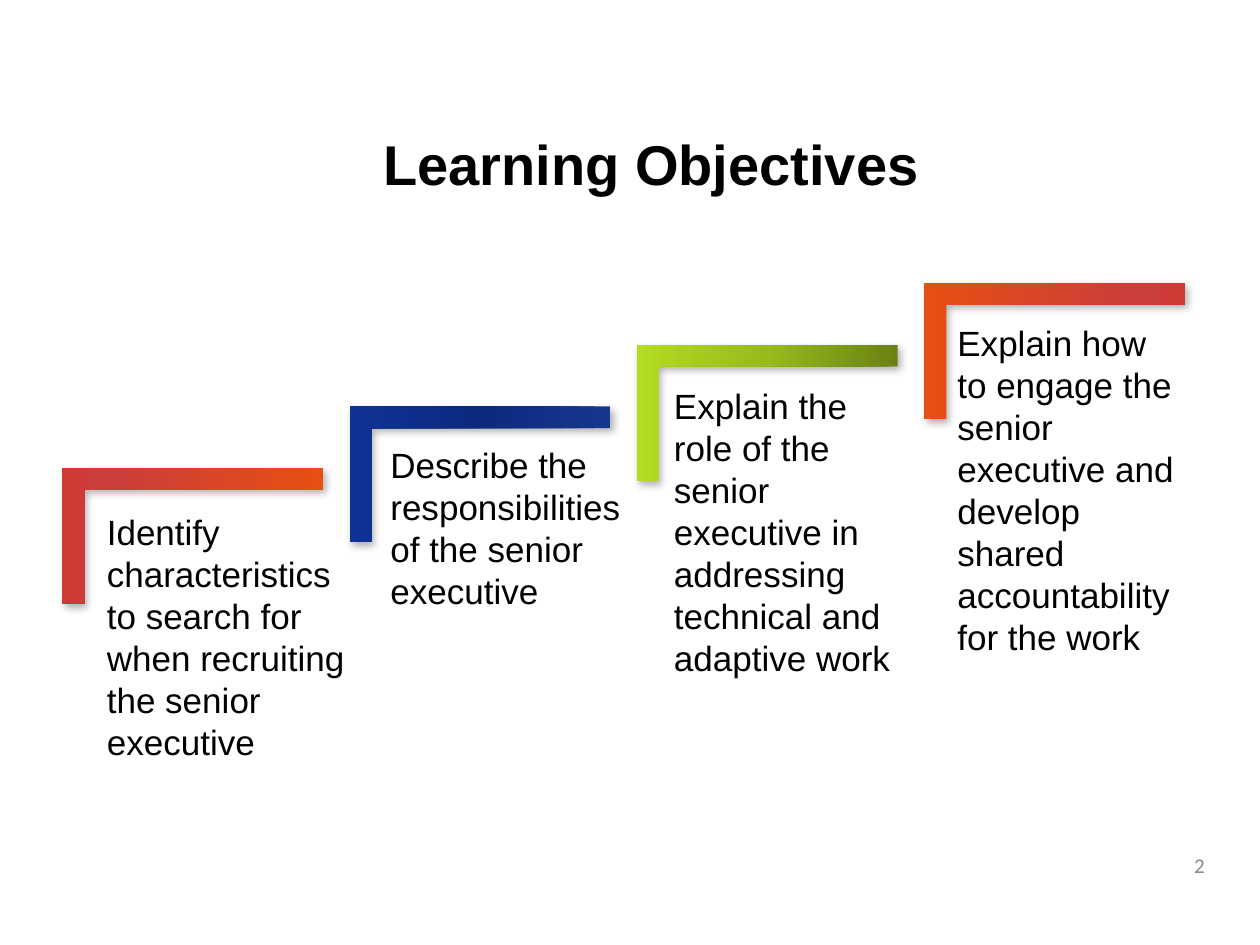
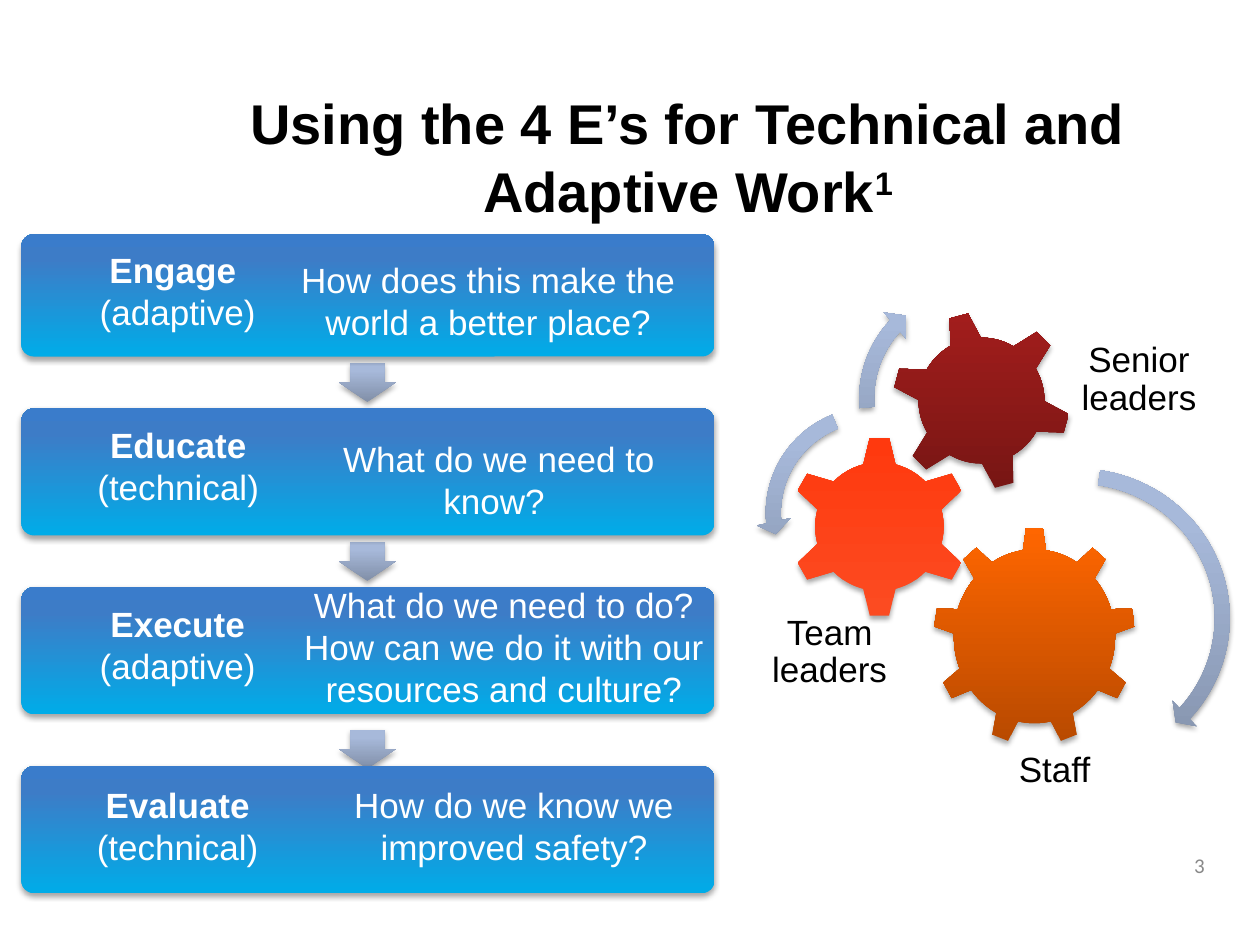
"""Build two slides: the learning objectives and the 4 E's with their gears."""
from dataclasses import dataclass
from math import cos, radians, sin

from pptx import Presentation
from pptx import util as u
from pptx.enum import shapes, text
from pptx.dml.color import RGBColor
from pptx.oxml import parse_xml
from pptx.oxml.ns import nsdecls

Box = tuple[float, float, float, float]
Stops = tuple[tuple[int, str], ...]
KIND = shapes.MSO_SHAPE
ALIGN = text.PP_ALIGN

HUES = {"black": "000000", "white": "FFFFFF", "grey": "898989"}
FADES: dict[str, Stops] = {
    "flame": ((0, "E65014"), (80, "CB3E3A"), (100, "CE3B37")),
    "navy": ((0, "17368D"), (50, "0C2A7E"), (100, "0E3296")),
    "lime": ((0, "6A8214"), (50, "97BA1D"), (100, "B3DC22")),
    "sky": ((0, "00ACE8"), (80, "3D7CC7"), (100, "3A7CCB")),
    "steel": ((0, "818FA8"), (80, "A7B9DA"), (100, "A7BADC")),
    "amber": ((0, "B94A00"), (100, "FF6600")),
    "coral": ((0, "FC4B21"), (100, "FF390E")),
    "wine": ((0, "781614"), (100, "A21D1C")),
}


@dataclass
class Shade:
    alpha: int
    blur: float
    dist: float
    angle: int


SLANT = Shade(30, 4.5, 2.6, 53)
DROP = Shade(35, 3.1, 1.8, 90)


@dataclass
class Note:
    box: Box
    words: str
    size: int = 20
    hue: str = "black"
    align: ALIGN = ALIGN.CENTER
    bold: bool = False
    font: str = "Arial"
    middle: bool = False
    pitch: float = 1.0


@dataclass
class Step:
    fade: str
    angle: int
    box: Box
    words: str


@dataclass
class Card:
    top: float
    high: float
    name: Box
    label: str
    ask: Box
    words: str


@dataclass
class Gear:
    mid: tuple[float, float]
    body: tuple[float, float]
    tip: tuple[float, float]
    teeth: int
    start: float
    root: float
    edge: float
    fade: str


@dataclass
class Turn:
    kind: KIND
    box: Box
    bends: tuple[float, ...]


STEPS = (
    Step("flame", 180, (0.75, 4, 2.17, 2.12),
         "Identify characteristics to search for when recruiting the senior executive"),
    Step("navy", 180, (3, 3.47, 2.17, 1.45),
         "Describe the responsibilities of the senior executive"),
    Step("lime", 180, (5.25, 3, 1.92, 2.46),
         "Explain the role of the senior executive in addressing technical and adaptive work"),
    Step("flame", 0, (7.5, 2.5, 2, 2.79),
         "Explain how to engage the senior executive and develop shared "
         "accountability for the work"),
)
CARDS = (
    Card(1.86, 0.97, (0.62, 1.92, 1.58, 0.77), "Engage \n(adaptive)",
         (2.25, 2, 3.25, 0.77), "How does this make the world a better place?"),
    Card(3.24, 1.01, (0.58, 3.31, 1.67, 0.77), "Educate\n(technical)",
         (2.5, 3.42, 2.92, 0.77), "What do we need to know? "),
    Card(4.66, 1.01, (0.62, 4.73, 1.58, 0.77), "Execute |(adaptive)",
         (2.25, 4.58, 3.5, 1.11),
         "What do we need to do? How can we do it with our resources and culture?"),
    Card(6.08, 1.01, (0.62, 6.17, 1.58, 0.77), "Evaluate| (technical)",
         (2.58, 6.17, 3, 0.77), "How do we know we improved safety?"),
)
DROPS = (2.81, 4.23, 5.72)
GEARS = (
    Gear((8.21, 5.05), (0.64, 0.69), (0.8, 0.86), 9, 90, 8.2, 4.8, "amber"),
    Gear((6.98, 4.18), (0.51, 0.51), (0.71, 0.71), 6, 30, 14.5, 6.2, "coral"),
    Gear((7.79, 3.18), (0.5, 0.5), (0.7, 0.7), 6, 45, 14.5, 6.2, "wine"),
)
TURNS = (
    Turn(KIND.CIRCULAR_ARROW, (7.27, 3.64, 2.57, 2.53),
         (0.047, 2.99, 25.105, 167.181, 0.055)),
    Turn(KIND.LEFT_CIRCULAR_ARROW, (6, 3.15, 1.86, 1.84),
         (0.065, 4.3, 104.891, 148.378, 0.075)),
    Turn(KIND.CIRCULAR_ARROW, (6.74, 2.17, 2.01, 1.98),
         (0.06, 4.717, 133.138, 105.082, 0.07)),
)
ROLES = (
    Note((8.25, 2.67, 1.58, 0.71), "Senior leaders", pitch=0.9),
    Note((7.83, 5.92, 1.08, 0.4), "Staff", pitch=0.9),
    Note((5.92, 4.83, 1.33, 0.71), "Team leaders", pitch=0.9),
)


def scale(box: Box) -> list[u.Length]:
    return [u.Inches(side) for side in box]


def write(slide, note: Note) -> list:
    frame = slide.shapes.add_textbox(*scale(note.box)).text_frame
    frame.word_wrap = True
    anchor = text.MSO_ANCHOR
    frame.vertical_anchor = anchor.MIDDLE if note.middle else anchor.TOP
    runs = []
    for row, line in enumerate(note.words.split("\n")):
        para = frame.paragraphs[0] if row == 0 else frame.add_paragraph()
        para.alignment = note.align
        para.line_spacing = note.pitch
        for part in line.split("|"):
            run = para.add_run()
            run.text = part
            run.font.name, run.font.size = note.font, u.Pt(note.size)
            run.font.bold = note.bold
            run.font.color.rgb = RGBColor.from_string(HUES[note.hue])
            runs.append(run)
    return runs


def paint(shape, fade: str, angle: int, shade: Shade) -> None:
    shape.line.fill.background()
    stops = "".join(f'<a:gs pos="{pos * 1000}"><a:srgbClr val="{hue}"/></a:gs>'
                    for pos, hue in FADES[fade])
    fill = parse_xml(
        f'<a:gradFill {nsdecls("a")} rotWithShape="0"><a:gsLst>{stops}</a:gsLst>'
        f'<a:lin ang="{angle * 60000}" scaled="0"/></a:gradFill>')
    cast = parse_xml(
        f'<a:effectLst {nsdecls("a")}><a:outerShdw blurRad="{u.Pt(shade.blur)}" '
        f'dist="{u.Pt(shade.dist)}" dir="{shade.angle * 60000}" rotWithShape="0">'
        f'<a:srgbClr val="{HUES["black"]}"><a:alpha val="{shade.alpha * 1000}"/>'
        f'</a:srgbClr></a:outerShdw></a:effectLst>')
    line = shape.line._get_or_add_ln()
    line.addprevious(fill)
    line.addnext(cast)


def place(slide, kind: KIND, box: Box, bends: tuple[float, ...], fade: str,
          angle: int = 270, shade: Shade = DROP, spin: int = 0) -> None:
    shape = slide.shapes.add_shape(kind, *scale(box))
    for spot, bend in enumerate(bends):
        shape.adjustments[spot] = bend
    shape.rotation = spin
    paint(shape, fade, angle, shade)


def cut(slide, gear: Gear) -> None:
    def spot(size: tuple[float, float], turn: float) -> tuple[int, int]:
        arc = radians(turn)
        return (u.Inches(gear.mid[0] + size[0] * cos(arc)),
                u.Inches(gear.mid[1] - size[1] * sin(arc)))

    pitch = 360 / gear.teeth
    gap = pitch - 2 * gear.root
    dots = []
    for tooth in range(gear.teeth):
        turn = gear.start + tooth * pitch
        dots += [spot(gear.body, turn - gear.root), spot(gear.tip, turn - gear.edge),
                 spot(gear.tip, turn + gear.edge)]
        dots += [spot(gear.body, turn + gear.root + gap * bit / 6) for bit in range(6)]
    path = slide.shapes.build_freeform(*dots[0])
    path.add_line_segments(dots[1:], close=True)
    paint(path.convert_to_shape(), gear.fade, 270, DROP)


def start(deck, title: Note, page: int):
    slide = deck.slides.add_slide(deck.slide_layouts[6])
    title.size, title.bold, title.middle = 32, True, True
    runs = write(slide, title)
    for run in runs[1:]:
        run._r.get_or_add_rPr().set("baseline", "30000")
    write(slide, Note((7.33, 6.67, 2.33, 0.4), str(page), 12, "grey", ALIGN.RIGHT,
                      font="Calibri", middle=True))
    return slide


def goals(deck) -> None:
    slide = start(deck, Note((0.67, 0.67, 9, 1.25), "Learning Objectives"), 2)
    for rank, step in enumerate(STEPS):
        box = (0.99 + 2.28 * rank, 3.22 - 0.49 * rank, 1.08, 2.07)
        place(slide, KIND.CORNER, box, (0.161, 0.161), step.fade, step.angle, SLANT, 90)
    for step in STEPS:
        write(slide, Note(step.box, step.words, align=ALIGN.LEFT))


def work(deck) -> None:
    title = Note((1.42, 0.67, 8.08, 1.14),
                 "Using the 4 E’s for Technical and Adaptive Work|1")
    slide = start(deck, title, 3)
    for top in DROPS:
        place(slide, KIND.RIGHT_ARROW, (2.76, top, 0.31, 0.45), (0.6, 0.5), "steel", spin=90)
    for card in CARDS:
        place(slide, KIND.ROUNDED_RECTANGLE, (0.17, card.top, 5.5, card.high), (0.1,), "sky")
        runs = write(slide, Note(card.name, card.label, hue="white", bold=True))
        runs[1].font.bold = False
        write(slide, Note(card.ask, card.words, hue="white"))
    for gear in GEARS:
        cut(slide, gear)
    for turn in TURNS:
        place(slide, turn.kind, turn.box, turn.bends, "steel")
    for role in ROLES:
        write(slide, role)


def main() -> None:
    deck = Presentation()
    deck.slide_width, deck.slide_height = u.Inches(10), u.Inches(7.5)
    goals(deck)
    work(deck)
    deck.save("out.pptx")


if __name__ == "__main__":
    main()
